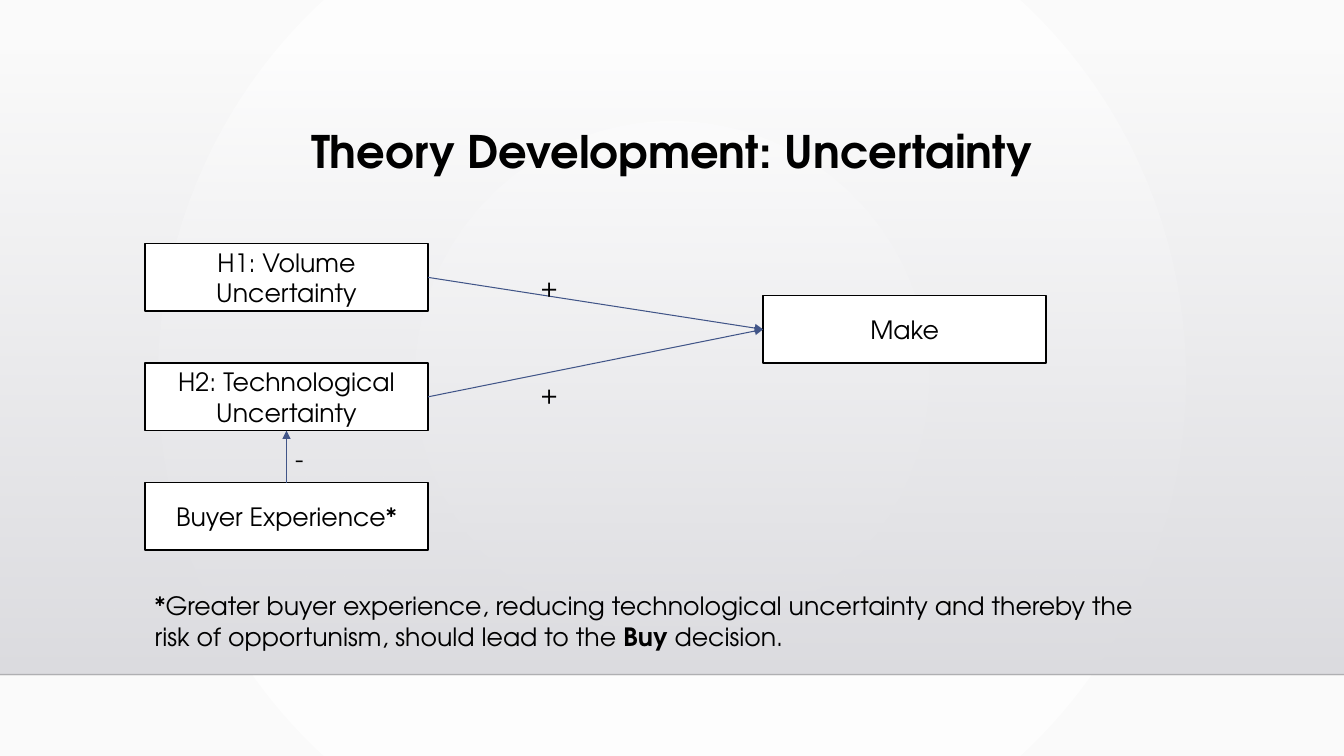
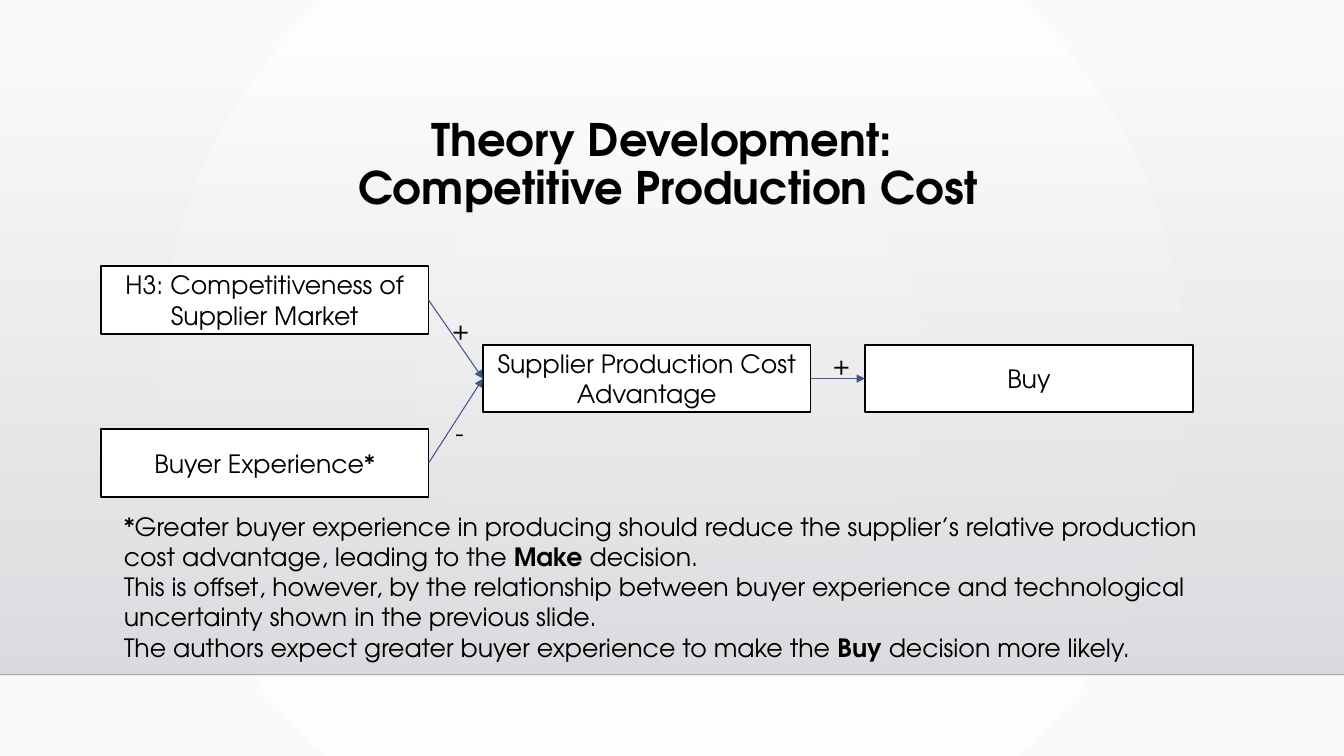
from lxml.etree import SubElement
from pptx import Presentation
from pptx.dml.color import RGBColor
from pptx.enum.shapes import MSO_CONNECTOR as Connector, MSO_SHAPE as Shape
from pptx.enum.text import MSO_ANCHOR as Anchor, MSO_AUTO_SIZE as AutoSize, PP_ALIGN as Align
from pptx.oxml.ns import qn
from pptx.util import Cm, Pt

FONT = "TeX Gyre Adventor"
BLACK = RGBColor(0x00, 0x00, 0x00)
WHITE = RGBColor(0xFF, 0xFF, 0xFF)
OFF_WHITE = RGBColor(0xFA, 0xFA, 0xFA)
PANEL_TOP = RGBColor(0xDC, 0xDC, 0xE0)
PANEL_BOTTOM = RGBColor(0xDE, 0xDE, 0xE2)
ARROW_BLUE = RGBColor(0x41, 0x55, 0x88)

SLIDE_W, SLIDE_H = 33.87, 19.05
PANEL_Y, PANEL_H = 1.3, 15.7
TITLE_H = 2.92
NODE_H = 1.7
SIGN_W, SIGN_H = 0.81, 1.02

# Connection sites of a rectangle
TOP, LEFT, BOTTOM, RIGHT = range(4)


def write(frame, text, size=18, bold=False, align=Align.LEFT, anchor=Anchor.TOP,
          spacing=None, fit=False):
    """Fill a frame: \\n parts paragraphs, \\v breaks a line, ** toggles bold."""
    frame.word_wrap = True
    frame.vertical_anchor = anchor
    if fit:
        frame.auto_size = AutoSize.SHAPE_TO_FIT_TEXT
    for number, line in enumerate(text.split("\n")):
        paragraph = frame.add_paragraph() if number else frame.paragraphs[0]
        paragraph.alignment = align
        paragraph.line_spacing = spacing
        for toggle, chunk in enumerate(line.split("**")):
            for row, words in enumerate(chunk.split("\v")):
                if row:
                    paragraph.add_line_break()
                run = paragraph.add_run()
                run.text = words
                run.font.name = FONT
                run.font.size = Pt(size)
                run.font.bold = bold or toggle % 2 == 1
                run.font.color.rgb = BLACK


def add_text(slide, box, text, **text_format):
    label = slide.shapes.add_textbox(*map(Cm, box))
    write(label.text_frame, text, **text_format)


def set_gradient(fill, *colours):
    fill.gradient()
    for stop, colour in zip(fill.gradient_stops, colours):
        stop.color.rgb = colour


def set_alpha(element, percent):
    """Set the opacity of the first colour inside the element."""
    colour = element.find(".//" + qn("a:srgbClr"))
    SubElement(colour, qn("a:alpha"), val=str(percent * 1000))


def add_line(slide, start=(0, 0), end=(0, 0), colour=BLACK, width=0.75):
    line = slide.shapes.add_connector(Connector.STRAIGHT, *map(Cm, start + end))
    line.line.color.rgb = colour
    line.line.width = Pt(width)
    SubElement(line.element.spPr, qn("a:effectLst"))
    return line


def style_master(master):
    """Give all slides a soft circular glow from the centre."""
    set_gradient(master.background.fill, WHITE, OFF_WHITE)
    linear = master.element.find(".//" + qn("a:lin"))
    gradient = linear.getparent()
    gradient.remove(linear)
    glow = SubElement(gradient, qn("a:path"))
    glow.set("path", "circle")
    SubElement(glow, qn("a:fillToRect"), l="50000", t="50000", r="50000", b="50000")


def add_backdrop(slide):
    panel = slide.shapes.add_shape(
        Shape.RECTANGLE, Cm(0), Cm(PANEL_Y), Cm(SLIDE_W), Cm(PANEL_H))
    panel.shadow.inherit = False
    panel.line.fill.background()
    set_gradient(panel.fill, PANEL_TOP, PANEL_BOTTOM)
    panel.fill.gradient_angle = 270
    set_alpha(panel.element.spPr, 0)
    floor_y = PANEL_Y + PANEL_H
    floor = add_line(slide, (0, floor_y), (SLIDE_W, floor_y), width=1)
    set_alpha(floor.element.spPr, 20)


def add_node(slide, x, y, width, text):
    node = slide.shapes.add_shape(Shape.RECTANGLE, Cm(x), Cm(y), Cm(width), Cm(NODE_H))
    node.shadow.inherit = False
    node.fill.solid()
    node.fill.fore_color.rgb = WHITE
    node.line.color.rgb = BLACK
    node.line.width = Pt(1.25)
    write(node.text_frame, text, align=Align.CENTER, anchor=Anchor.MIDDLE)
    return node


def add_effect(slide, cause, cause_site, result, result_site):
    arrow = add_line(slide, colour=ARROW_BLUE)
    arrow.begin_connect(cause, cause_site)
    arrow.end_connect(result, result_site)
    SubElement(arrow.line._get_or_add_ln(), qn("a:tailEnd"), type="triangle")


def add_sign(slide, x, y, sign):
    add_text(slide, (x, y, SIGN_W, SIGN_H), sign, fit=True)


def add_uncertainty_model(slide, x, y, width=7.14, pitch=3.01):
    volume, technology, experience = [
        add_node(slide, x, y + row * pitch, width, text)
        for row, text in enumerate(
            ["H1: Volume Uncertainty", "H2: Technological Uncertainty", "Buyer Experience*"])]
    make = add_node(slide, x + 15.58, y + 1.31, width, "Make")
    add_effect(slide, volume, RIGHT, make, LEFT)
    add_effect(slide, technology, RIGHT, make, LEFT)
    add_effect(slide, experience, TOP, technology, BOTTOM)
    for dx, dy, sign in [(9.71, 0.57, "+"), (9.71, 3.26, "+"), (3.54, 4.91, "-")]:
        add_sign(slide, x + dx, y + dy, sign)


def add_cost_model(slide, x, y, width=8.26, pitch=9.63):
    market, experience, advantage, buy = [
        add_node(slide, x + column * pitch, y + dy, width, text)
        for column, dy, text in [
            (0, 0, "H3: Competitiveness of Supplier Market"),
            (0, 4.11, "Buyer Experience*"),
            (1, 1.98, "Supplier Production Cost Advantage"),
            (2, 1.98, "Buy")]]
    add_effect(slide, market, RIGHT, advantage, LEFT)
    add_effect(slide, experience, RIGHT, advantage, LEFT)
    add_effect(slide, advantage, RIGHT, buy, LEFT)
    for dx, dy, sign in [(8.59, 1.09, "+"), (18.19, 1.98, "+"), (8.69, 3.68, "-")]:
        add_sign(slide, x + dx, y + dy, sign)


def add_theory_slide(prs, title, title_box, add_model, model_at, remark, remark_box):
    slide = prs.slides.add_slide(prs.slide_layouts[6])
    add_backdrop(slide)
    add_text(slide, title_box, title, size=32, bold=True, align=Align.CENTER, spacing=0.9)
    add_model(slide, *model_at)
    add_text(slide, remark_box, remark, fit=True)


def main():
    prs = Presentation()
    prs.slide_width, prs.slide_height = Cm(SLIDE_W), Cm(SLIDE_H)
    style_master(prs.slide_master)
    add_theory_slide(
        prs, "Theory Development: Uncertainty", (0, 3.15, SLIDE_W, TITLE_H),
        add_uncertainty_model, (3.65, 6.14),
        "*Greater buyer experience, reducing technological uncertainty and thereby "
        "the risk of opportunism, should lead to the **Buy** decision.",
        (3.65, 14.76, 25.76, 1.8))
    add_theory_slide(
        prs, "Theory Development: \vCompetitive Production Cost", (0, 2.84, 33.68, TITLE_H),
        add_cost_model, (2.54, 6.71),
        "*Greater buyer experience in producing should reduce the supplier’s relative "
        "production cost advantage, leading to the **Make** decision. \v"
        "This is offset, however, by the relationship between buyer experience and "
        "technological uncertainty shown in the previous slide.\n"
        "The authors expect greater buyer experience to make the **Buy **decision more likely.",
        (2.87, 12.75, 28.65, 4.11))
    prs.save("out.pptx")


if __name__ == "__main__":
    main()
